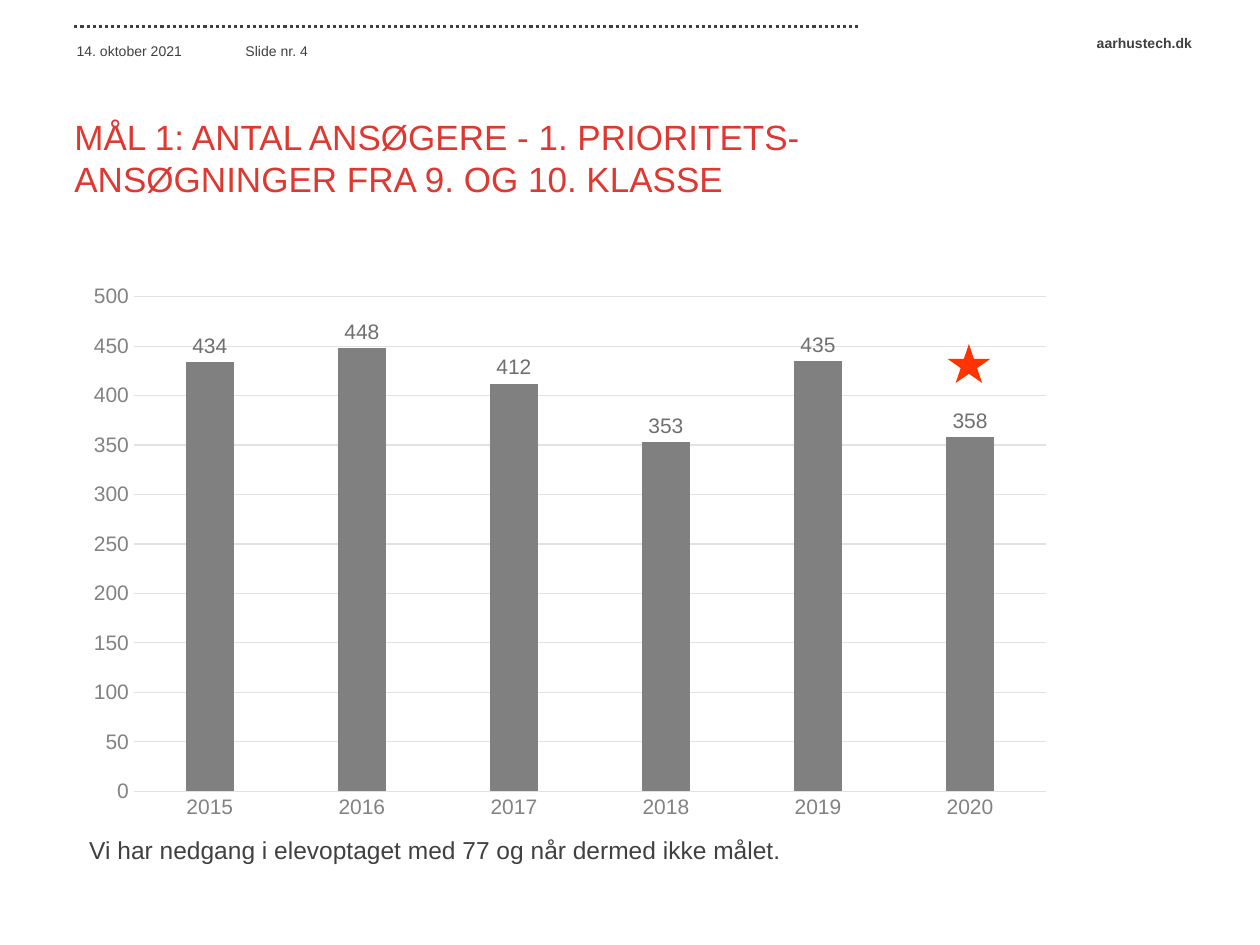
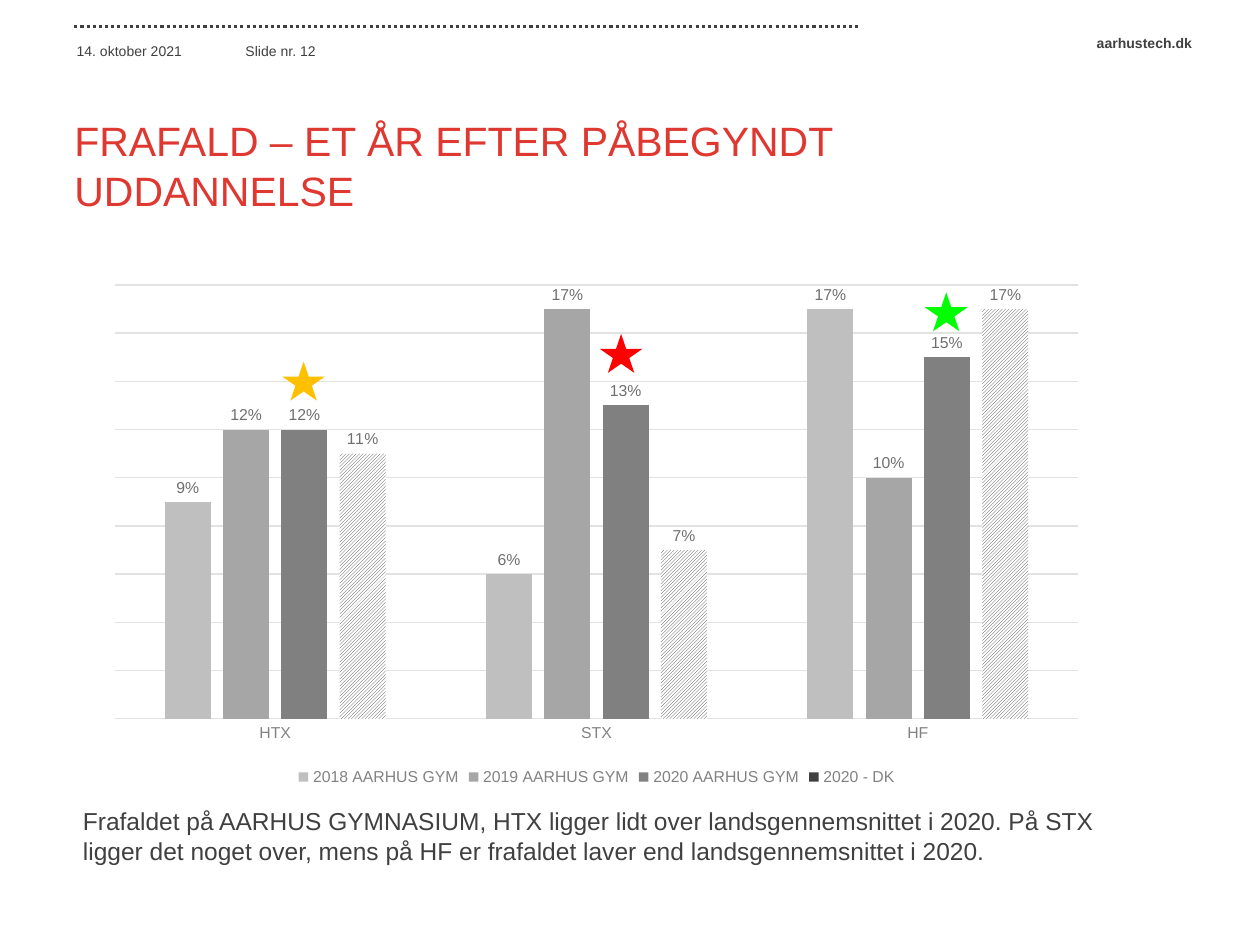
"""Build two slides on applicant numbers and drop-out at an upper secondary school."""
from lxml.etree import SubElement
from pptx import Presentation
from pptx.chart.data import CategoryChartData
from pptx.dml.color import RGBColor
from pptx.enum.chart import XL_CHART_TYPE, XL_LABEL_POSITION, XL_LEGEND_POSITION, XL_TICK_MARK
from pptx.enum.dml import MSO_LINE, MSO_PATTERN
from pptx.enum.shapes import MSO_CONNECTOR, MSO_SHAPE
from pptx.enum.text import MSO_ANCHOR, MSO_AUTO_SIZE, PP_ALIGN
from pptx.oxml import parse_xml
from pptx.oxml.ns import nsdecls, qn
from pptx.util import Inches, Pt

FONT = "Arial"
RED, INK, DOTS = "DE3831", "404041", "3F3F40"
AXIS_TEXT, LABEL_TEXT, GRID = "828284", "6F6F71", "E2E2E3"

SLIDES = [
    {
        "number": 4,
        "title": "MÅL 1: ANTAL ANSØGERE - 1. PRIORITETS-ANSØGNINGER FRA 9. OG 10. KLASSE",
        "title_size": 20,
        "chart_box": (0.59, 2.18, 7.87, 4.41),
        "plot": (0.06, 0.04, 0.92, 0.89),
        "categories": ["2015", "2016", "2017", "2018", "2019", "2020"],
        "series": [("Series 1", (434, 448, 412, 353, 435, 358), "808080")],
        "format": "General",
        "scale": (500, 50),
        "chart_size": 12,
        "is_comparison": False,
        "stars": [(7.52, 2.73, "FF3300")],
        "conclusion": "Vi har nedgang i elevoptaget med 77 og når dermed ikke målet.",
        "conclusion_box": (0.61, 6.58, 6.51, 0.34),
    },
    {
        "number": 12,
        "title": "FRAFALD – ET ÅR EFTER PÅBEGYNDT UDDANNELSE",
        "title_size": 23.4,
        "chart_box": (0.75, 2.18, 7.97, 4.1),
        "plot": (0.02, 0.02, 0.96, 0.84),
        "categories": ["HTX", "STX", "HF"],
        "series": [
            ("2018 AARHUS GYM", (0.09, 0.06, 0.17), "BFBFBF"),
            ("2019 AARHUS GYM", (0.12, 0.17, 0.10), "A6A6A6"),
            ("2020 AARHUS GYM", (0.12, 0.13, 0.15), "808080"),
            ("2020 - DK", (0.11, 0.07, 0.17), INK),
        ],
        "format": "0%",
        "scale": (0.18, 0.02),
        "chart_size": 9,
        "is_comparison": True,
        "stars": [(2.24, 2.87, "FFC000"), (4.76, 2.65, "FF0000"), (7.34, 2.32, "00FF00")],
        "conclusion": "Frafaldet på AARHUS GYMNASIUM, HTX ligger lidt over landsgennemsnittet i 2020. "
                      "På STX ligger det noget over, mens på HF er frafaldet laver end "
                      "landsgennemsnittet i 2020.",
        "conclusion_box": (0.56, 6.35, 8.37, 0.57),
    },
]


def rgb(hex_colour):
    """Turn a hex string into a colour."""
    return RGBColor.from_string(hex_colour)


def style_font(font, size, colour, bold=False):
    """Give a font the shared typeface with its size and colour."""
    font.name = FONT
    font.size = Pt(size)
    font.bold = bold
    font.color.rgb = rgb(colour)


prs = Presentation()
prs.slide_width, prs.slide_height = Inches(10), Inches(7.5)

for content in SLIDES:
    slide = prs.slides.add_slide(prs.slide_layouts[5])

    rule = slide.shapes.add_connector(
        MSO_CONNECTOR.STRAIGHT, Inches(0.59), Inches(0.21), Inches(6.81), Inches(0.21))
    rule.line.color.rgb = rgb(DOTS)
    rule.line.width = Pt(1.75)
    rule.line.dash_style = MSO_LINE.ROUND_DOT
    SubElement(rule._element.spPr, qn("a:effectLst"))

    texts = [
        ("aarhustech.dk", (7.83, 0.22, 1.73, 0.24), 8, True, PP_ALIGN.RIGHT, MSO_ANCHOR.MIDDLE),
        ("14. oktober 2021", (0.51, 0.21, 1.26, 0.31), 8, False, PP_ALIGN.LEFT, MSO_ANCHOR.BOTTOM),
        (f"Slide nr. {content['number']}", (1.85, 0.21, 1.26, 0.31), 8, False,
         PP_ALIGN.LEFT, MSO_ANCHOR.BOTTOM),
        (content["conclusion"], content["conclusion_box"], 14, False,
         PP_ALIGN.LEFT, MSO_ANCHOR.TOP),
    ]
    for wording, box, size, bold, alignment, anchor in texts:
        frame = slide.shapes.add_textbox(*map(Inches, box)).text_frame
        frame.word_wrap = True
        frame.vertical_anchor = anchor
        frame.text = wording
        frame.paragraphs[0].alignment = alignment
        style_font(frame.paragraphs[0].runs[0].font, size, INK, bold)

    title = slide.shapes.title
    title.left, title.top, title.width, title.height = map(Inches, (0.59, 0.92, 6.77, 0.87))
    heading = title.text_frame
    heading.text = content["title"]
    heading.word_wrap = True
    heading.auto_size = MSO_AUTO_SIZE.NONE
    heading.vertical_anchor = MSO_ANCHOR.TOP
    heading.margin_left = heading.margin_right = heading.margin_top = heading.margin_bottom = 0
    heading.paragraphs[0].alignment = PP_ALIGN.LEFT
    heading.paragraphs[0].line_spacing = 1.0
    style_font(heading.paragraphs[0].runs[0].font, content["title_size"], RED)

    figures = CategoryChartData(number_format=content["format"])
    figures.categories = content["categories"]
    for name, values, _ in content["series"]:
        figures.add_series(name, values)
    chart = slide.shapes.add_chart(
        XL_CHART_TYPE.COLUMN_CLUSTERED, *map(Inches, content["chart_box"]), figures).chart
    chart.has_title = False
    style_font(chart.font, 10, INK)

    plot = chart.plots[0]
    plot.gap_width, plot.overlap = 219, -27
    plot.vary_by_categories = False
    for series, (_, _, colour) in zip(plot.series, content["series"]):
        series.format.fill.solid()
        series.format.fill.fore_color.rgb = rgb(colour)
        labels = series.data_labels
        labels.show_value = True
        labels.position = XL_LABEL_POSITION.OUTSIDE_END
        labels.number_format = content["format"]
        labels.number_format_is_linked = False
        style_font(labels.font, content["chart_size"], LABEL_TEXT)

    for axis in (chart.category_axis, chart.value_axis):
        axis.major_tick_mark = axis.minor_tick_mark = XL_TICK_MARK.NONE
        style_font(axis.tick_labels.font, content["chart_size"], AXIS_TEXT)
    chart.value_axis.minimum_scale = 0
    chart.value_axis.maximum_scale, chart.value_axis.major_unit = content["scale"]
    chart.value_axis.format.line.fill.background()
    chart.value_axis.has_major_gridlines = True
    for line in (chart.category_axis.format.line, chart.value_axis.major_gridlines.format.line):
        line.color.rgb = rgb(GRID)
        line.width = Pt(0.75)

    chart.has_legend = content["is_comparison"]
    if content["is_comparison"]:
        chart.value_axis.visible = False
        chart.legend.position = XL_LEGEND_POSITION.BOTTOM
        chart.legend.include_in_layout = False
        style_font(chart.legend.font, content["chart_size"], AXIS_TEXT)
        national = plot.series[3]
        for index in range(len(content["categories"])):
            hatch = national.points[index].format.fill
            hatch.patterned()
            hatch.pattern = MSO_PATTERN.DARK_UPWARD_DIAGONAL
            hatch.fore_color.rgb = rgb(INK)
            hatch.back_color.rgb = rgb("FFFFFF")

    plot_area = chart._chartSpace.chart.plotArea
    for automatic in plot_area.findall(qn("c:layout")):
        plot_area.remove(automatic)
    left, top, width, height = content["plot"]
    plot_area.insert(0, parse_xml(
        f'<c:layout {nsdecls("c")}><c:manualLayout><c:layoutTarget val="inner"/>'
        f'<c:xMode val="edge"/><c:yMode val="edge"/><c:x val="{left}"/><c:y val="{top}"/>'
        f'<c:w val="{width}"/><c:h val="{height}"/></c:manualLayout></c:layout>'))

    for left, top, colour in content["stars"]:
        star = slide.shapes.add_shape(
            MSO_SHAPE.STAR_5_POINT, Inches(left), Inches(top), Inches(0.34), Inches(0.31))
        star.shadow.inherit = False
        star.fill.solid()
        star.fill.fore_color.rgb = rgb(colour)
        star.line.fill.background()

prs.save("out.pptx")
